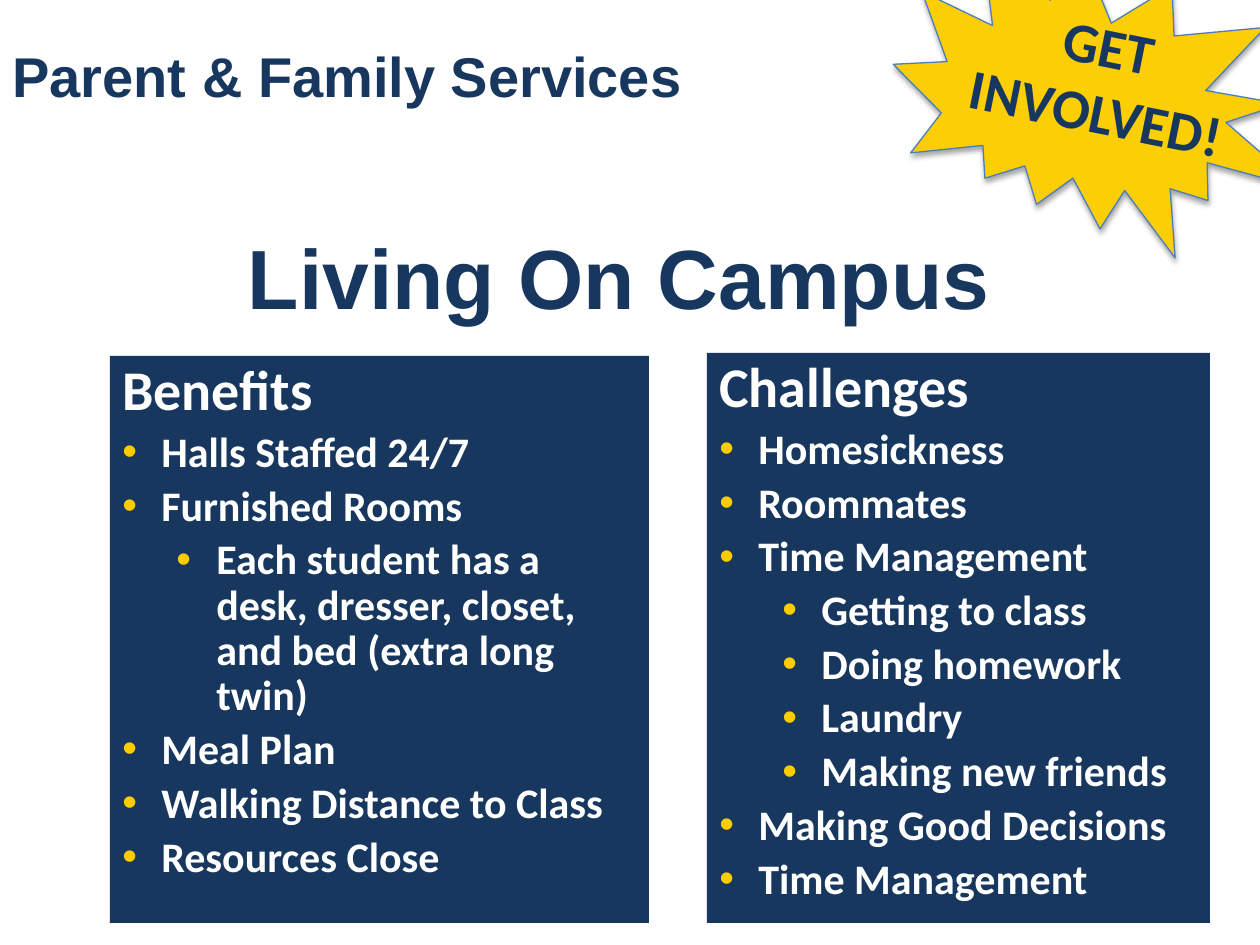
from dataclasses import dataclass

from lxml.etree import SubElement
from pptx import Presentation
from pptx.dml.color import RGBColor
from pptx.enum.shapes import MSO_SHAPE
from pptx.enum.text import MSO_ANCHOR, MSO_AUTO_SIZE, PP_ALIGN
from pptx.oxml.ns import qn
from pptx.util import Emu, Pt


@dataclass(frozen=True)
class Theme:
    navy: str = "17375E"
    white: str = "FFFFFF"
    gold: str = "FCCE06"
    bullet: str = "FFCC00"
    outline: str = "4B7EBC"
    shadow: str = "000000"
    heading_font: str = "Arial"
    body_font: str = "Calibri"
    title: int = 48
    heading: int = 32
    body: int = 24


def px(n):
    return Emu(round(n * 914400 / 126))


def rgb(color):
    return RGBColor.from_string(color)


class Deck:
    """Hold the theme and the current slide, and draw each kind of element."""

    def __init__(self, theme):
        self.theme = theme
        self.prs = Presentation()
        self.prs.slide_width, self.prs.slide_height = px(1260), px(945)
        self.s = self.prs.slides.add_slide(self.prs.slide_layouts[6])

    def format(self, p, size, color, font):
        for r in p.runs:
            r.font.size, r.font.bold, r.font.name = Pt(size), True, font
            r.font.color.rgb = rgb(color)

    def text(self, box, text, size, font, align=PP_ALIGN.LEFT, anchor=MSO_ANCHOR.MIDDLE, rotation=0):
        sp = self.s.shapes.add_textbox(*map(px, box))
        sp.rotation = rotation
        tf = sp.text_frame
        tf.word_wrap, tf.vertical_anchor = True, anchor
        tf.text = text
        for p in tf.paragraphs:
            p.alignment = align
            self.format(p, size, self.theme.navy, font)
        return sp

    def shape(self, kind, box, fill):
        sp = self.s.shapes.add_shape(kind, *map(px, box))
        sp.shadow.inherit = False
        sp.fill.solid()
        sp.fill.fore_color.rgb = rgb(fill)
        sp.line.fill.background()
        return sp

    def bullet(self, p, margin, hanging):
        pPr = p._p.get_or_add_pPr()
        pPr.set("marL", str(px(margin)))
        pPr.set("indent", str(px(-hanging)))
        SubElement(SubElement(pPr, qn("a:buClr")), qn("a:srgbClr"), val=self.theme.bullet)
        SubElement(pPr, qn("a:buFont"), typeface="Arial")
        SubElement(pPr, qn("a:buChar"), char="•")

    def panel(self, box, heading, items, sub_indent):
        t = self.theme
        tf = self.shape(MSO_SHAPE.RECTANGLE, box, t.navy).text_frame
        tf.word_wrap, tf.vertical_anchor = True, MSO_ANCHOR.TOP
        tf.text = "\n".join([heading] + [text for _, text in items])
        for p in tf.paragraphs:
            p.alignment, p.line_spacing = PP_ALIGN.LEFT, 0.9
        head, *rest = tf.paragraphs
        self.format(head, t.heading, t.white, t.body_font)
        for p, (level, _) in zip(rest, items):
            p.level, p.space_before = level, Pt(4.8)
            self.bullet(p, *(sub_indent if level else (39, 39)))
            self.format(p, t.body, t.white, t.body_font)

    def burst(self, box, rotation):
        t = self.theme
        sp = self.shape(MSO_SHAPE.EXPLOSION2, box, t.gold)
        sp.rotation = rotation
        sp.line.color.rgb, sp.line.width = rgb(t.outline), Pt(0.75)
        effects = sp._element.spPr.find(qn("a:effectLst"))
        shadow = SubElement(effects, qn("a:outerShdw"), blurRad=str(Pt(3.1)),
                            dist=str(Pt(1.8)), dir="5400000", rotWithShape="0")
        color = SubElement(shadow, qn("a:srgbClr"), val=t.shadow)
        SubElement(color, qn("a:alpha"), val="35000")


def main():
    t = Theme()
    deck = Deck(t)
    deck.text((0, 29, 766, 92), "Parent & Family Services", t.heading, t.heading_font)
    deck.text((57, 197, 1124, 157), "Living On Campus", t.title, t.heading_font, PP_ALIGN.CENTER)
    deck.panel((110, 356, 539, 567), "Benefits", [
        (0, "Halls Staffed 24/7"),
        (0, "Furnished Rooms"),
        (1, "Each student has a desk, dresser, closet, and bed (extra long twin)"),
        (0, "Meal Plan"),
        (0, "Walking Distance to Class"),
        (0, "Resources Close"),
    ], (94, 40))
    deck.panel((707, 353, 503, 570), "Challenges", [
        (0, "Homesickness"),
        (0, "Roommates"),
        (0, "Time Management"),
        (1, "Getting to class"),
        (1, "Doing homework"),
        (1, "Laundry"),
        (1, "Making new friends"),
        (0, "Making Good Decisions"),
        (0, "Time Management"),
    ], (102, 39))
    deck.burst((893, -60, 418, 324), 40)
    call = deck.text((934, 5, 338, 149), "GET\nINVOLVED!", t.heading, t.body_font,
                     PP_ALIGN.CENTER, MSO_ANCHOR.TOP, 11.5)
    call.text_frame.auto_size = MSO_AUTO_SIZE.SHAPE_TO_FIT_TEXT
    deck.prs.save("out.pptx")


if __name__ == "__main__":
    main()
